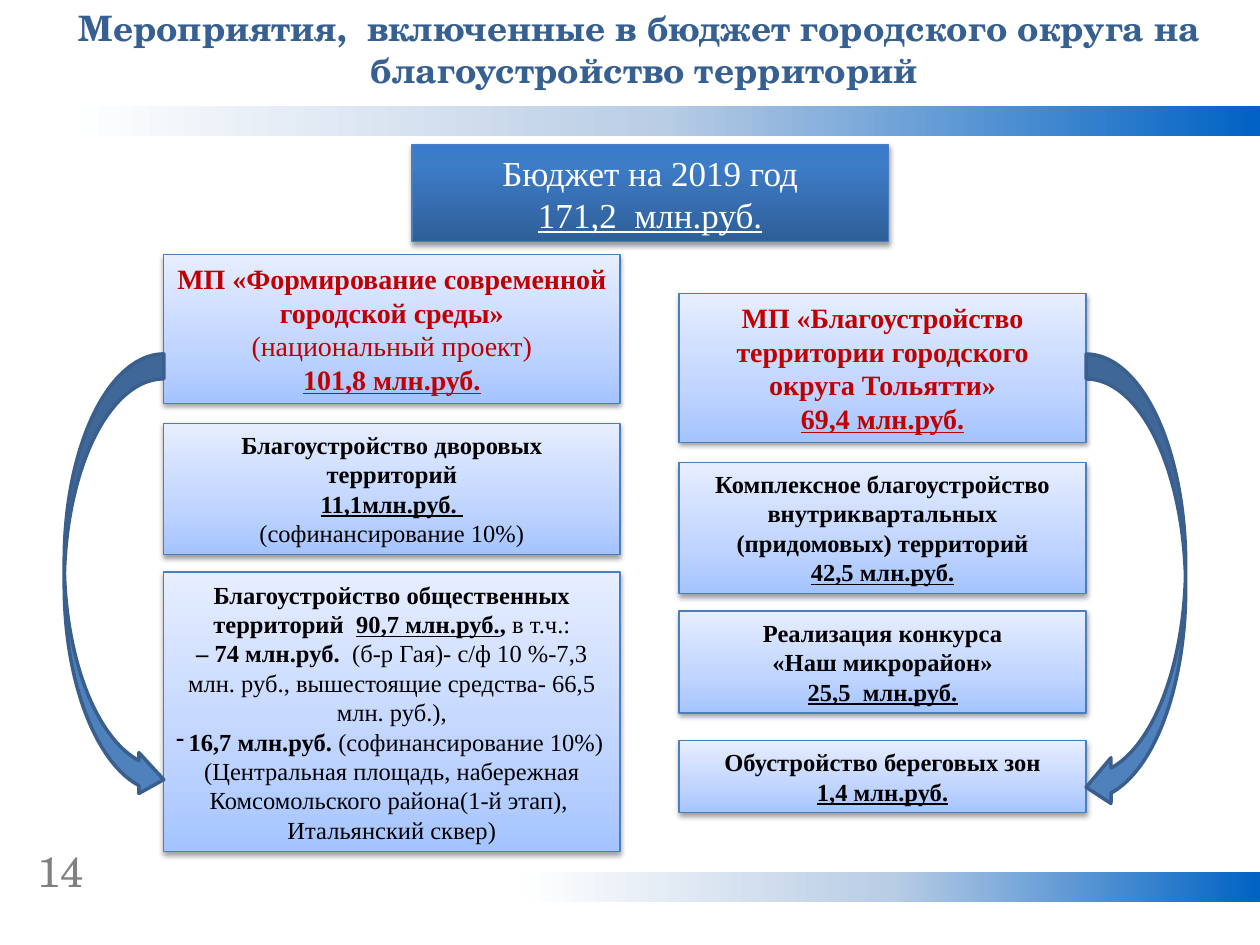
from lxml import etree
from pptx import Presentation
from pptx.dml.color import RGBColor
from pptx.enum.shapes import MSO_SHAPE
from pptx.enum.text import MSO_ANCHOR, PP_ALIGN
from pptx.oxml.ns import qn
from pptx.util import Inches, Pt

RECTANGLE = MSO_SHAPE.RECTANGLE
RIGHT_ARROW = MSO_SHAPE.CURVED_RIGHT_ARROW
LEFT_ARROW = MSO_SHAPE.CURVED_LEFT_ARROW
CENTER, LEFT = PP_ALIGN.CENTER, PP_ALIGN.LEFT
TOP, MIDDLE = MSO_ANCHOR.TOP, MSO_ANCHOR.MIDDLE

SERIF = "Times New Roman"
SCHOOL = "TeX Gyre Schola"
COLORS = {
    "title": "376092", "number": "808080", "program": "C00000",
    "black": "000000", "white": "FFFFFF", "border": "4B7EBC",
    "arrow": "4F81BD", "arrow_border": "3A5F8C",
}
BAR_STOPS = [(0, "0062C4"), (50, "B9CDE5"), (100, "FFFFFF")]
LIGHT_STOPS = [(0, "A4C4FF"), (35, "BFD4FF"), (100, "E6EEFF")]
DARK_STOPS = [(0, "2F5F99"), (80, "3D7CC7"), (100, "3A7CCB")]
PLAIN, BOLD, UNDERLINED, BOLD_UNDERLINED = "", "b", "u", "bu"

PROGRAM_LEFT = [
    [("МП «Формирование современной городской среды»", BOLD)],
    [("(национальный проект)", PLAIN)],
    [("101,8 млн.руб.", BOLD_UNDERLINED)],
]
PROGRAM_RIGHT = [
    [("МП «Благоустройство территории городского округа Тольятти»", BOLD)],
    [("69,4 млн.руб.", BOLD_UNDERLINED)],
]
YARDS = [
    [("Благоустройство дворовых территорий", BOLD)],
    [("11,1млн.руб. ", BOLD_UNDERLINED)],
    [("(софинансирование 10%)", PLAIN)],
]
PUBLIC_AREAS = [
    [("Благоустройство общественных территорий  ", BOLD),
     ("90,7 млн.руб.", BOLD_UNDERLINED), (", ", BOLD), ("в т.ч.:", PLAIN)],
    [("– 74 млн.руб.  ", BOLD),
     ("(б-р Гая)- с/ф 10 %-7,3 млн. руб., вышестоящие средства- 66,5 млн. руб.),", PLAIN)],
    [("16,7 млн.руб. ", BOLD),
     ("(софинансирование 10%) (Центральная площадь, набережная "
      "Комсомольского района(1-й этап),  Итальянский сквер)", PLAIN)],
]
QUARTERS = [
    [("Комплексное благоустройство внутриквартальных (придомовых) территорий", BOLD)],
    [("42,5 млн.руб.", BOLD_UNDERLINED)],
]
CONTEST = [
    [("Реализация конкурса", BOLD)],
    [("«Наш микрорайон»", BOLD)],
    [("25,5  млн.руб.", BOLD_UNDERLINED)],
]
SHORES = [
    [("Обустройство береговых зон", BOLD)],
    [("1,4 млн.руб.", BOLD_UNDERLINED)],
]


def write_text(shape, paragraphs, size, color, font=SERIF, align=CENTER,
               anchor=MIDDLE, bullet_index=None):
    frame = shape.text_frame
    frame.word_wrap = True
    frame.vertical_anchor = anchor
    frame.margin_left = frame.margin_right = Inches(0.1)
    frame.margin_top = frame.margin_bottom = Inches(0.05)
    for index, runs in enumerate(paragraphs):
        paragraph = frame.paragraphs[0] if index == 0 else frame.add_paragraph()
        paragraph.alignment = align
        paragraph.space_before = Pt(0)
        paragraph.line_spacing = 1.0
        for text, style in runs:
            run = paragraph.add_run()
            run.text = text
            run.font.name = font
            run.font.size = Pt(size)
            run.font.bold = "b" in style
            run.font.underline = "u" in style
            run.font.color.rgb = RGBColor.from_string(COLORS[color])
        if index == bullet_index:
            properties = paragraph._p.get_or_add_pPr()
            etree.SubElement(properties, qn("a:buFontTx"))
            etree.SubElement(properties, qn("a:buChar"), char="-")


def fill_gradient(shape, stops, angle):
    shape.fill.gradient()
    shape.fill.gradient_angle = angle
    stop_list = shape._element.spPr.find(qn("a:gradFill")).find(qn("a:gsLst"))
    for old_stop in list(stop_list):
        stop_list.remove(old_stop)
    for position, color in stops:
        stop = etree.SubElement(stop_list, qn("a:gs"), pos=str(position * 1000))
        etree.SubElement(stop, qn("a:srgbClr"), val=color)


def add_shadow(shape, opacity=38):
    effects = shape._element.spPr.find(qn("a:effectLst"))
    shadow = etree.SubElement(effects, qn("a:outerShdw"), blurRad=str(Pt(3.1)),
                              dist=str(Pt(1.6)), dir="5400000", rotWithShape="0")
    color = etree.SubElement(shadow, qn("a:srgbClr"), val=COLORS["black"])
    etree.SubElement(color, qn("a:alpha"), val=str(opacity * 1000))


def add_preset(slide, preset, box):
    shape = slide.shapes.add_shape(preset, *map(Inches, box))
    shape.shadow.inherit = False
    return shape


def add_bar(slide, box):
    bar = add_preset(slide, RECTANGLE, box)
    fill_gradient(bar, BAR_STOPS, 180)
    bar.line.fill.background()


def add_card(slide, box, paragraphs, size=14, color="black", stops=LIGHT_STOPS,
             bullet_index=None):
    card = add_preset(slide, RECTANGLE, box)
    fill_gradient(card, stops, 90)
    card.line.color.rgb = RGBColor.from_string(COLORS["border"])
    card.line.width = Pt(0.75)
    add_shadow(card)
    write_text(card, paragraphs, size, color, bullet_index=bullet_index)


def add_column(slide, left, width, cards):
    for top, height, paragraphs, options in cards:
        add_card(slide, (left, top, width, height), paragraphs, **options)


def add_arrow(slide, preset, box, spread):
    arrow = add_preset(slide, preset, box)
    for index, value in enumerate((0.25, spread, 0.25)):
        arrow.adjustments[index] = value
    arrow.fill.solid()
    arrow.fill.fore_color.rgb = RGBColor.from_string(COLORS["arrow"])
    arrow.line.color.rgb = RGBColor.from_string(COLORS["arrow_border"])
    arrow.line.width = Pt(2)


def place_title(slide, box):
    title = slide.shapes.title
    title.left, title.top, title.width, title.height = map(Inches, box)
    text = "Мероприятия,  включенные в бюджет городского округа на  благоустройство территорий"
    write_text(title, [[(text, BOLD)]], 20, "title", font=SCHOOL, anchor=TOP)


def add_page_number(slide, box):
    number = slide.shapes.add_textbox(*map(Inches, box))
    write_text(number, [[("14", PLAIN)]], 24, "number", font=SCHOOL,
               align=LEFT, anchor=TOP)


def main():
    presentation = Presentation()
    presentation.slide_width = Inches(10)
    presentation.slide_height = Inches(7.5)
    slide = presentation.slides.add_slide(presentation.slide_layouts[5])

    add_bar(slide, (0.51, 0.84, 9.49, 0.24))
    add_bar(slide, (4.13, 6.92, 5.87, 0.24))
    add_page_number(slide, (0.2, 6.66, 0.78, 0.5))
    place_title(slide, (0.35, 0, 9.53, 1.03))

    budget = [[("Бюджет на 2019 год", PLAIN)], [("171,2  млн.руб.", UNDERLINED)]]
    add_card(slide, (3.27, 1.15, 3.78, 0.77), budget, 20, "white", DARK_STOPS)

    program = {"size": 16, "color": "program"}
    add_column(slide, 1.3, 3.62, [
        (2.02, 1.18, PROGRAM_LEFT, program),
        (3.36, 1.04, YARDS, {}),
        (4.54, 2.22, PUBLIC_AREAS, {"bullet_index": 2}),
    ])
    add_column(slide, 5.39, 3.23, [
        (2.33, 1.18, PROGRAM_RIGHT, program),
        (3.67, 1.04, QUARTERS, {}),
        (4.85, 0.81, CONTEST, {}),
        (5.88, 0.57, SHORES, {}),
    ])
    add_arrow(slide, RIGHT_ARROW, (0.51, 2.81, 0.79, 3.54), 0.41)
    add_arrow(slide, LEFT_ARROW, (8.62, 2.81, 0.79, 3.62), 0.46)
    presentation.save("out.pptx")


if __name__ == "__main__":
    main()
